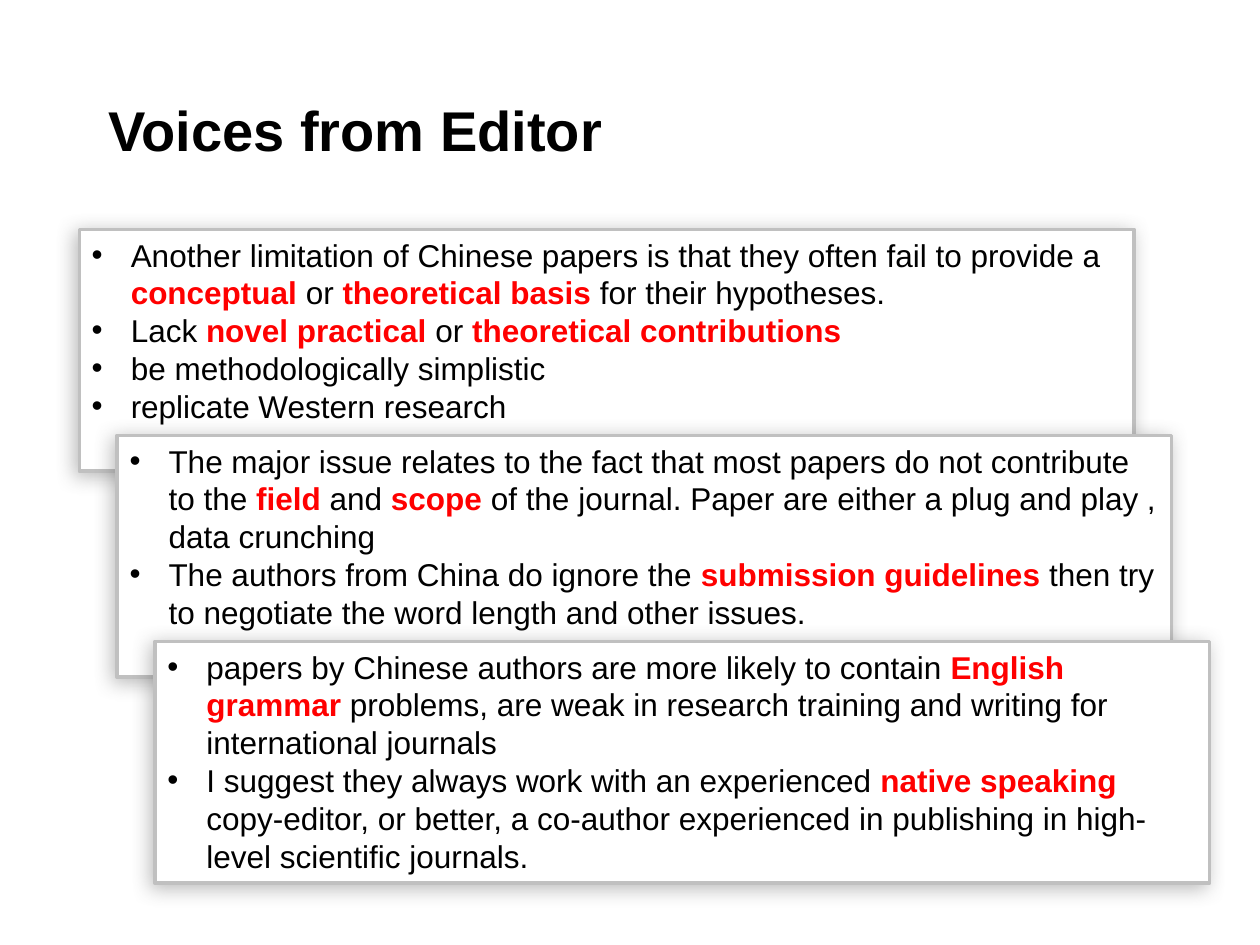
from dataclasses import dataclass
from lxml import etree
from pptx import Presentation, util as u
from pptx.dml.color import RGBColor
from pptx.enum import shapes, text
from pptx.oxml.ns import qn


@dataclass(frozen=True)
class Theme:
    font: str = "Arial"
    ink: str = "000000"
    mark: str = "FF0000"
    paper: str = "FFFFFF"
    edge: str = "C0C0C0"
    shade: str = "595959"
    head: int = 32
    body: int = 18


def rgb(code):
    return RGBColor.from_string(code)


def put(item, **vals):
    for key, val in vals.items():
        setattr(item, key, val)


def node(parent, tag, **vals):
    return etree.SubElement(parent, qn(tag), {k: str(v) for k, v in vals.items()})


class Deck:
    def __init__(self, theme):
        self.theme = theme
        self.prs = Presentation()
        put(self.prs, slide_width=u.Inches(10), slide_height=u.Inches(7.5))
        self.slide = self.prs.slides.add_slide(self.prs.slide_layouts[6])

    def area(self, x, y, w, h):
        """Turn shares of the slide's size into lengths."""
        wide, high = self.prs.slide_width, self.prs.slide_height
        return [int(v) for v in (x * wide, y * high, w * wide, h * high)]

    def run(self, para, words, size, tint, bold):
        run = para.add_run()
        run.text = words
        put(run.font, name=self.theme.font, size=u.Pt(size), bold=bold)
        run.font.color.rgb = rgb(tint)

    def title(self, words, *area):
        frame = self.slide.shapes.add_textbox(*self.area(*area)).text_frame
        put(frame, word_wrap=True, vertical_anchor=text.MSO_ANCHOR.BOTTOM,
            margin_left=0, margin_right=0, margin_top=0, margin_bottom=0)
        self.run(frame.paragraphs[0], words, self.theme.head, self.theme.ink, True)

    def shadow(self, box):
        box.shadow.inherit = False
        glow = node(box._element.spPr.find(qn("a:effectLst")), "a:outerShdw",
                    blurRad=u.Pt(11), dist=u.Pt(3), dir=135 * 60000,
                    algn="tr", rotWithShape=0)
        tint = node(glow, "a:srgbClr", val=self.theme.shade)
        node(tint, "a:alpha", val=40000)

    def bullet(self, para, words):
        """Add a bulleted line; parts between asterisks are stressed."""
        props = para._p.get_or_add_pPr()
        props.set("marL", str(u.Inches(0.31)))
        props.set("indent", str(u.Inches(-0.31)))
        node(props, "a:buFont", typeface=self.theme.font)
        node(props, "a:buChar", char="•")
        para.alignment = text.PP_ALIGN.LEFT
        for i, part in enumerate(words.split("*")):
            if part:
                bold = i % 2 == 1
                tint = self.theme.mark if bold else self.theme.ink
                self.run(para, part, self.theme.body, tint, bold)

    def card(self, lines, *area):
        box = self.slide.shapes.add_shape(
            shapes.MSO_SHAPE.RECTANGLE, *self.area(*area))
        box.fill.solid()
        box.fill.fore_color.rgb = rgb(self.theme.paper)
        box.line.color.rgb = rgb(self.theme.edge)
        box.line.width = u.Pt(2)
        self.shadow(box)
        frame = box.text_frame
        put(frame, word_wrap=True, vertical_anchor=text.MSO_ANCHOR.TOP)
        for i, words in enumerate(lines):
            para = frame.add_paragraph() if i else frame.paragraphs[0]
            self.bullet(para, words)


CARDS = [
    ["Another limitation of Chinese papers is that they often fail to provide a "
     "*conceptual *or *theoretical basis *for their hypotheses.",
     "Lack *novel practical *or *theoretical contributions*",
     "be methodologically simplistic",
     "replicate Western research"],
    ["The major issue relates to the fact that most papers do not contribute to the "
     "*field *and *scope *of the journal. Paper are either a plug and play , "
     "data crunching",
     "The authors from China do ignore the *submission guidelines *then try to "
     "negotiate the word length and other issues."],
    ["papers by Chinese authors are more likely to contain *English grammar *problems, "
     "are weak in research training and writing for international journals",
     "I suggest they always work with an experienced *native speaking *copy-editor, "
     "or better, a co-author experienced in publishing in high-level scientific "
     "journals."],
]


def main():
    deck = Deck(Theme())
    left, top = 0.63 / 10, 1.82 / 7.5
    right, down = 0.3 / 10, 1.635 / 7.5
    for i, lines in enumerate(CARDS):
        deck.card(lines, left + i * right, top + i * down, 8.37 / 10, 1.92 / 7.5)
    deck.title("Voices from Editor", 0.86 / 10, 0.74 / 7.5, 4.91 / 10, 0.55 / 7.5)
    deck.prs.save("out.pptx")


if __name__ == "__main__":
    main()
